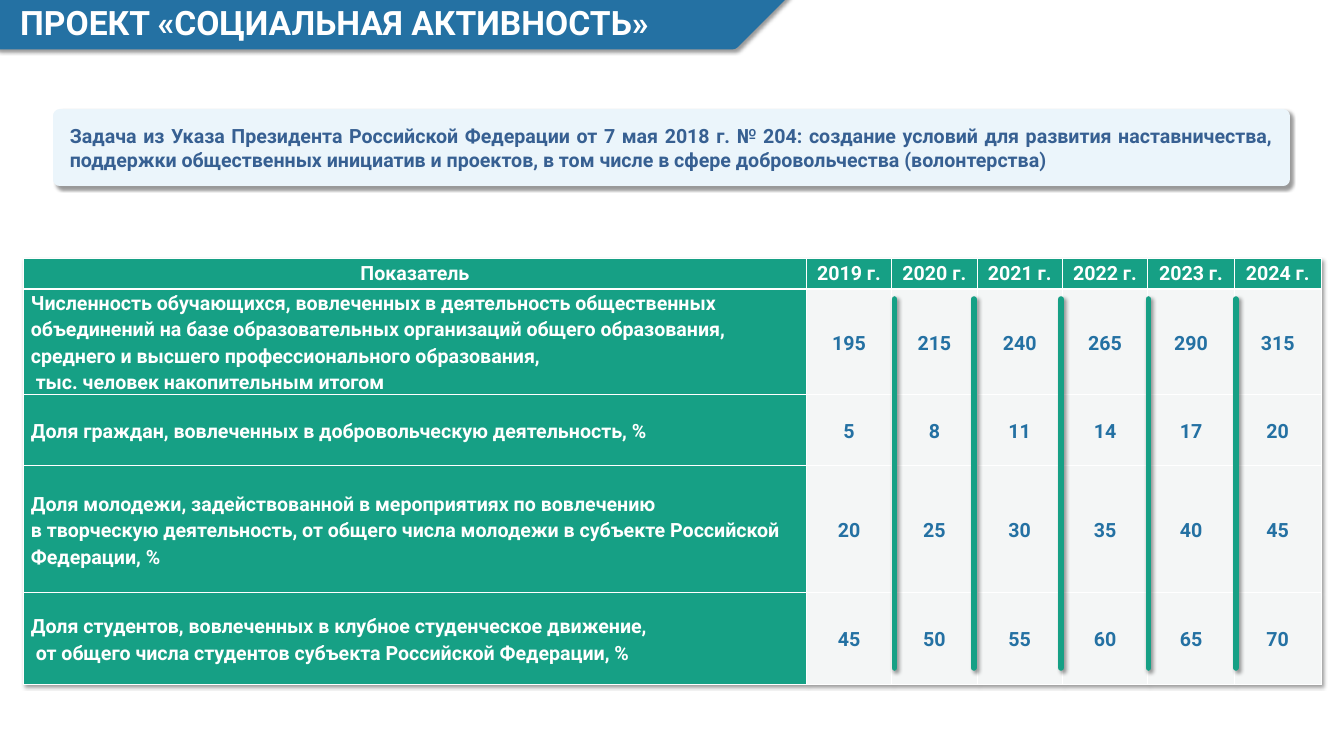
from pptx import Presentation, util as u
from pptx.dml.color import RGBColor
from pptx.enum import shapes, text
from pptx.oxml import parse_xml
from pptx.oxml.ns import nsdecls, qn

BLUE = RGBColor(0x24, 0x71, 0xA3)
NAVY = RGBColor(0x37, 0x60, 0x92)
PALE = RGBColor(0xEB, 0xF5, 0xFB)
GREEN = RGBColor(0x16, 0xA0, 0x85)
GREY = RGBColor(0xF4, 0xF6, 0xF6)
WHITE = RGBColor(0xFF, 0xFF, 0xFF)

YEARS = range(2019, 2025)
INDICATORS = [
    ("Численность обучающихся, вовлеченных в деятельность общественных объединений "
     "на базе образовательных организаций общего образования, среднего и высшего "
     "профессионального образования,\n тыс. человек накопительным итогом",
     [195, 215, 240, 265, 290, 315]),
    ("Доля граждан, вовлеченных в добровольческую деятельность, %",
     [5, 8, 11, 14, 17, 20]),
    ("Доля молодежи, задействованной в мероприятиях по вовлечению\n"
     "в творческую деятельность, от общего числа молодежи в субъекте "
     "Российской Федерации, %",
     [20, 25, 30, 35, 40, 45]),
    ("Доля студентов, вовлеченных в клубное студенческое движение,\n"
     " от общего числа студентов субъекта Российской Федерации, %",
     [45, 50, 55, 60, 65, 70]),
]
COLUMN_WIDTHS = [11.65] + [1.27] * 4 + [1.29] * 2
ROW_HEIGHTS = [0.45, 1.57, 1.06, 1.89, 1.36]
DIVIDERS = [13.31] + [14.49 + 1.3 * step for step in range(4)]


class SlideBuilder:
    """Holds the text style and the current slide, and adds its elements."""

    font = "Roboto"
    size = 21

    def __init__(self, slide):
        self.slide = slide

    def add_text(self, frame, content, color, align, size=None, spacing=None):
        paragraph = frame.paragraphs[0]
        paragraph.alignment = align
        if spacing:
            paragraph.line_spacing = spacing
        for index, line in enumerate(content.split("\n")):
            if index:
                paragraph.add_line_break()
            run = paragraph.add_run()
            run.text = line
            run.font.name = self.font
            run.font.size = u.Pt(size or self.size)
            run.font.bold = True
            run.font.color.rgb = color

    def shadow(self):
        return parse_xml(
            f'<a:effectLst {nsdecls("a")}><a:outerShdw blurRad="{u.Pt(4)}" '
            f'dist="{u.Pt(3)}" dir="2700000" algn="tl" rotWithShape="0">'
            '<a:srgbClr val="000000"><a:alpha val="40000"/></a:srgbClr>'
            '</a:outerShdw></a:effectLst>')

    def panel(self, kind, left, top, width, height, color):
        shape = self.slide.shapes.add_shape(
            kind, u.Inches(left), u.Inches(top), u.Inches(width), u.Inches(height))
        shape.fill.solid()
        shape.fill.fore_color.rgb = color
        shape.line.color.rgb = color
        shape.line.width = u.Pt(15)
        properties = shape.element.spPr
        properties.find(qn("a:ln")).append(parse_xml(f'<a:round {nsdecls("a")}/>'))
        properties.append(self.shadow())
        return shape

    def title(self, content):
        title = self.slide.shapes.title
        title.left, title.top = u.Inches(0.2), u.Inches(0.04)
        title.width, title.height = u.Inches(15.24), u.Inches(0.62)
        frame = title.text_frame
        frame.auto_size = text.MSO_AUTO_SIZE.NONE
        frame.vertical_anchor = text.MSO_ANCHOR.TOP
        self.add_text(frame, content, WHITE, text.PP_ALIGN.LEFT, 36, 0.9)

    def banner(self):
        banner = self.panel(
            shapes.MSO_SHAPE.SNIP_1_RECTANGLE, 0, -0.87, 11.65, 1.5, BLUE)
        banner.adjustments[0] = 0.5
        banner.rotation = 180
        banner.element.spPr.find(qn("a:xfrm")).set("flipH", "1")
        self.slide.shapes.title.element.addprevious(banner.element)

    def task(self, content):
        box = self.panel(shapes.MSO_SHAPE.RECTANGLE, 0.89, 1.73, 18.2, 0.94, PALE)
        frame = box.text_frame
        frame.word_wrap = True
        frame.vertical_anchor = text.MSO_ANCHOR.MIDDLE
        frame.margin_left = frame.margin_right = u.Inches(0.15)
        frame.margin_top = frame.margin_bottom = u.Inches(0.07)
        self.add_text(frame, content, NAVY, text.PP_ALIGN.JUSTIFY)

    def cell(self, cell, content, fill, color, align, is_header, below_header):
        widths = {"L": 1, "R": 1, "T": 3 if below_header else 1,
                  "B": 3 if is_header else 1}
        properties = cell._tc.get_or_add_tcPr()
        for side, width in widths.items():
            properties.append(parse_xml(
                f'<a:ln{side} {nsdecls("a")} w="{u.Pt(width)}"><a:solidFill>'
                f'<a:srgbClr val="{WHITE}"/></a:solidFill></a:ln{side}>'))
        cell.fill.solid()
        cell.fill.fore_color.rgb = fill
        cell.margin_left = cell.margin_right = u.Inches(0.07 if is_header else 0.11)
        cell.margin_top = cell.margin_bottom = 0
        cell.vertical_anchor = (
            text.MSO_ANCHOR.TOP if is_header else text.MSO_ANCHOR.MIDDLE)
        self.add_text(cell.text_frame, content, color, align, spacing=1.15)

    def table(self, rows):
        table = self.slide.shapes.add_table(
            len(rows), len(rows[0]), u.Inches(0.35), u.Inches(3.85),
            u.Inches(sum(COLUMN_WIDTHS)), u.Inches(sum(ROW_HEIGHTS))).table
        table._tbl.tblPr.insert(0, self.shadow())
        for column, width in zip(table.columns, COLUMN_WIDTHS):
            column.width = u.Inches(width)
        for row, height in zip(table.rows, ROW_HEIGHTS):
            row.height = u.Inches(height)
        for r, values in enumerate(rows):
            for c, value in enumerate(values):
                is_label = r == 0 or c == 0
                align = text.PP_ALIGN.LEFT if r and not c else text.PP_ALIGN.CENTER
                self.cell(table.cell(r, c), str(value), GREEN if is_label else GREY,
                          WHITE if is_label else BLUE, align, r == 0, r == 1)

    def divider(self, x):
        line = self.slide.shapes.add_connector(
            shapes.MSO_CONNECTOR.STRAIGHT,
            u.Inches(x), u.Inches(4.45), u.Inches(x), u.Inches(9.94))
        line.line.color.rgb = GREEN
        line.line.width = u.Pt(6)
        properties = line.element.spPr
        properties.find(qn("a:ln")).set("cap", "rnd")
        properties.append(self.shadow())


def main():
    presentation = Presentation()
    presentation.slide_width = u.Inches(20)
    presentation.slide_height = u.Inches(11.25)
    builder = SlideBuilder(
        presentation.slides.add_slide(presentation.slide_layouts[5]))
    builder.title("ПРОЕКТ «СОЦИАЛЬНАЯ АКТИВНОСТЬ»")
    builder.banner()
    builder.task(
        "Задача из Указа Президента Российской Федерации от 7 мая 2018 г. № 204: "
        "создание условий для развития наставничества, поддержки общественных "
        "инициатив и проектов, в том числе в сфере добровольчества (волонтерства)")
    header = ["Показатель"] + [f"{year} г." for year in YEARS]
    builder.table([header] + [[label] + values for label, values in INDICATORS])
    for x in DIVIDERS:
        builder.divider(x)
    presentation.save("out.pptx")


if __name__ == "__main__":
    main()
